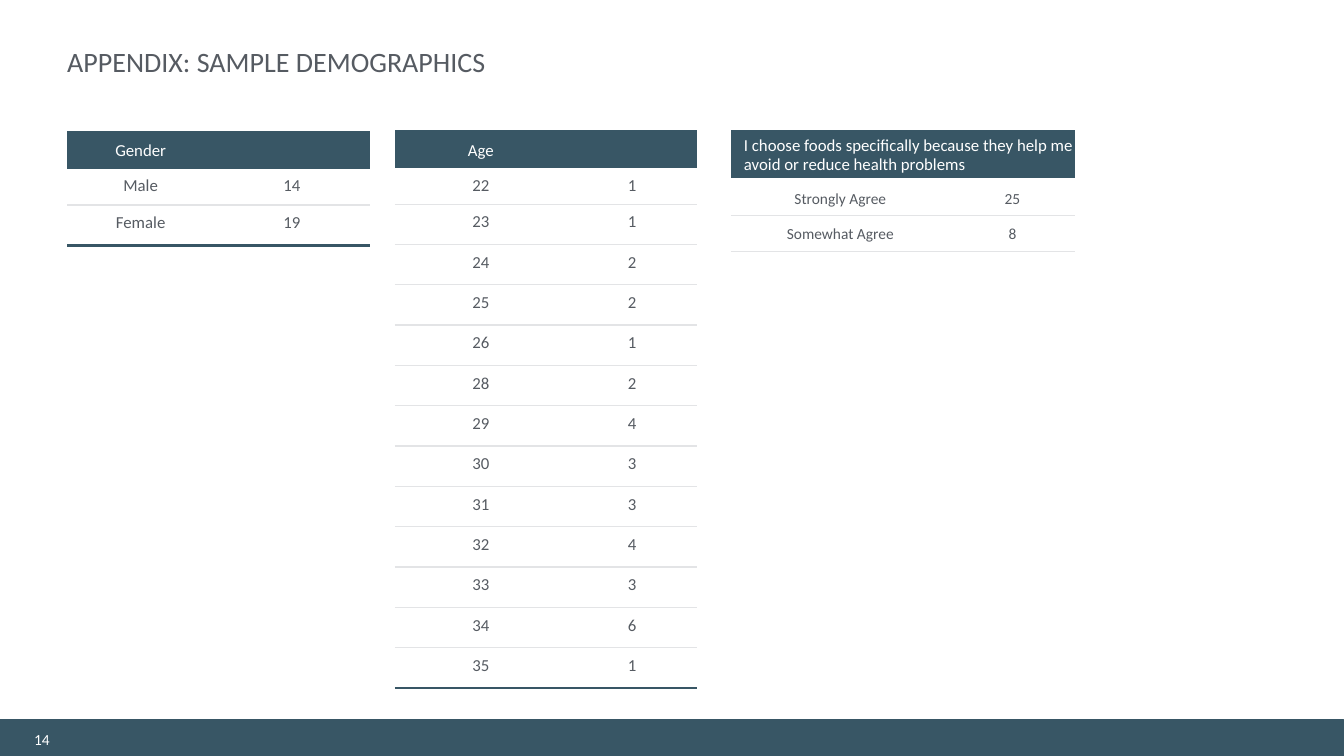
from dataclasses import dataclass
from pptx import Presentation
from pptx.dml.color import RGBColor
from pptx.enum.shapes import MSO_SHAPE
from pptx.enum.text import MSO_ANCHOR, PP_ALIGN
from pptx.oxml import parse_xml
from pptx.oxml.ns import nsdecls, qn
from pptx.util import Inches, Pt


@dataclass(frozen=True)
class Theme:
    """Hold the colours, font and type sizes of the slide."""
    teal: str = "385665"
    ink: str = "565B62"
    rule: str = "E3E4E6"
    white: str = "FFFFFF"
    font: str = "Calibri"
    title: int = 20
    body: int = 12
    small: int = 11


LOOK = Theme()
WIDE, HIGH = Inches(13.333), Inches(7.5)
COLS, ROWS = 160, 90
NO_STYLE = "{2D5ABB26-0587-4C30-8999-92F81FD0307C}"
GAP, THIN, BASE = (LOOK.white, 4.5), (LOOK.rule, 1), (LOOK.teal, 2.25)

GENDER = [("Male", 14), ("Female", 19)]
AGES = [(22, 1), (23, 1), (24, 2), (25, 2), (26, 1), (28, 2), (29, 4),
        (30, 3), (31, 3), (32, 4), (33, 3), (34, 6), (35, 1)]
FOODS = [("Strongly Agree", 25), ("Somewhat Agree", 8)]
FOODS_HEAD = ("I choose foods specifically because they help me "
              "avoid or reduce health problems")


def across(cols):
    """Turn grid columns into a length."""
    return int(WIDE * cols / COLS)


def down(rows):
    """Turn grid rows into a length."""
    return int(HIGH * rows / ROWS)


def place(left, top, width, height):
    """Turn a grid box into four lengths."""
    return across(left), down(top), across(width), down(height)


def apply(target, values):
    """Set each attribute of a dict on the target."""
    for name, value in values.items():
        setattr(target, name, value)


def pads(left, top, right, bottom):
    """Name four inset values in inches."""
    sides = ("left", "top", "right", "bottom")
    return {f"margin_{side}": Inches(pad)
            for side, pad in zip(sides, (left, top, right, bottom))}


def write(frame, text, size, color, align=PP_ALIGN.LEFT):
    """Write one styled line into a text frame."""
    line = frame.paragraphs[0]
    line.alignment = align
    run = line.add_run()
    run.text = str(text)
    apply(run.font, {"name": LOOK.font, "size": Pt(size), "bold": False})
    run.font.color.rgb = RGBColor.from_string(color)
    return line


def label(slide, box, text, size, color, inset):
    """Add a text box centred in height."""
    frame = slide.shapes.add_textbox(*place(*box)).text_frame
    apply(frame, {"word_wrap": True,
                  "vertical_anchor": MSO_ANCHOR.MIDDLE, **inset})
    write(frame, text, size, color)


def footer(slide, number):
    """Add the bottom bar and the slide number."""
    bar = slide.shapes.add_shape(MSO_SHAPE.RECTANGLE, *place(0, 85.7, COLS, 4.3))
    bar.shadow.inherit = False
    bar.fill.solid()
    for part in (bar.fill.fore_color, bar.line.color):
        part.rgb = RGBColor.from_string(LOOK.teal)
    bar.line.width = Pt(0.75)
    label(slide, (2.25, 85.6, 7.8, 4.8), number, LOOK.small, LOOK.white,
          pads(0.15, 0.08, 0.15, 0.08))


def edge(cell, side, color, width):
    """Draw one border of a cell."""
    cell._tc.get_or_add_tcPr().append(parse_xml(
        f'<a:ln{side} {nsdecls("a")} w="{Pt(width)}"><a:solidFill>'
        f'<a:srgbClr val="{color}"/></a:solidFill></a:ln{side}>'))


def dress(cell, inset, top, bottom, fill=None):
    """Set the insets, borders and fill of a cell."""
    apply(cell, {"vertical_anchor": MSO_ANCHOR.MIDDLE, **inset})
    for side, line in (("T", top), ("B", bottom)):
        if line:
            edge(cell, side, *line)
    if fill:
        cell.fill.solid()
        cell.fill.fore_color.rgb = RGBColor.from_string(fill)
    else:
        cell.fill.background()


def tally(slide, left, top, widths, heights, head, data,
          size=LOOK.body, inset=pads(0.01, 0.01, 0.01, 0.05),
          last=BASE, wide=False):
    """Add a table of counts under a filled header."""
    box = place(left, top, sum(widths), sum(heights))
    table = slide.shapes.add_table(len(heights), 2, *box).table
    apply(table, {"first_row": False, "horz_banding": False})
    table._tbl.tblPr.find(qn("a:tableStyleId")).text = NO_STYLE
    for col, width in zip(table.columns, widths):
        col.width = across(width)
    for row, height in zip(table.rows, heights):
        row.height = down(height)

    first = table.cell(0, 0)
    for col in range(2):
        dress(table.cell(0, col), pads(0, 0, 0, 0), None, GAP, LOOK.teal)
    line = write(first.text_frame, head, LOOK.body, LOOK.white,
                 PP_ALIGN.LEFT if wide else PP_ALIGN.CENTER)
    if wide:
        first.merge(table.cell(0, 1))
        line.line_spacing = 0.9
        line._p.get_or_add_pPr().set("marL", str(Inches(0.13)))

    for row, pair in enumerate(data, 1):
        above = GAP if row == 1 else THIN
        below = last if row == len(data) else THIN
        for col, value in enumerate(pair):
            cell = table.cell(row, col)
            dress(cell, inset, above, below)
            write(cell.text_frame, value, size, LOOK.ink, PP_ALIGN.CENTER)


def main():
    """Build the slide and save it."""
    deck = Presentation()
    apply(deck, {"slide_width": WIDE, "slide_height": HIGH})
    slide = deck.slides.add_slide(deck.slide_layouts[6])
    footer(slide, 14)
    label(slide, (8, 3.4, 144, 7.7), "APPENDIX: SAMPLE DEMOGRAPHICS",
          LOOK.title, LOOK.ink, pads(0, 0.05, 0.1, 0.05))
    tally(slide, 8, 15.6, (17.5, 18.5), (4.8, 4, 4.8), "Gender", GENDER)
    tally(slide, 47, 15.5, (20.5, 15.5), [4.8, 4] + [4.8] * 12, "Age", AGES)
    tally(slide, 87, 15.5, (25, 16), (6, 4.2, 4.2), FOODS_HEAD, FOODS,
          LOOK.small, pads(0.1, 0.01, 0.01, 0), THIN, True)
    deck.save("out.pptx")


if __name__ == "__main__":
    main()
